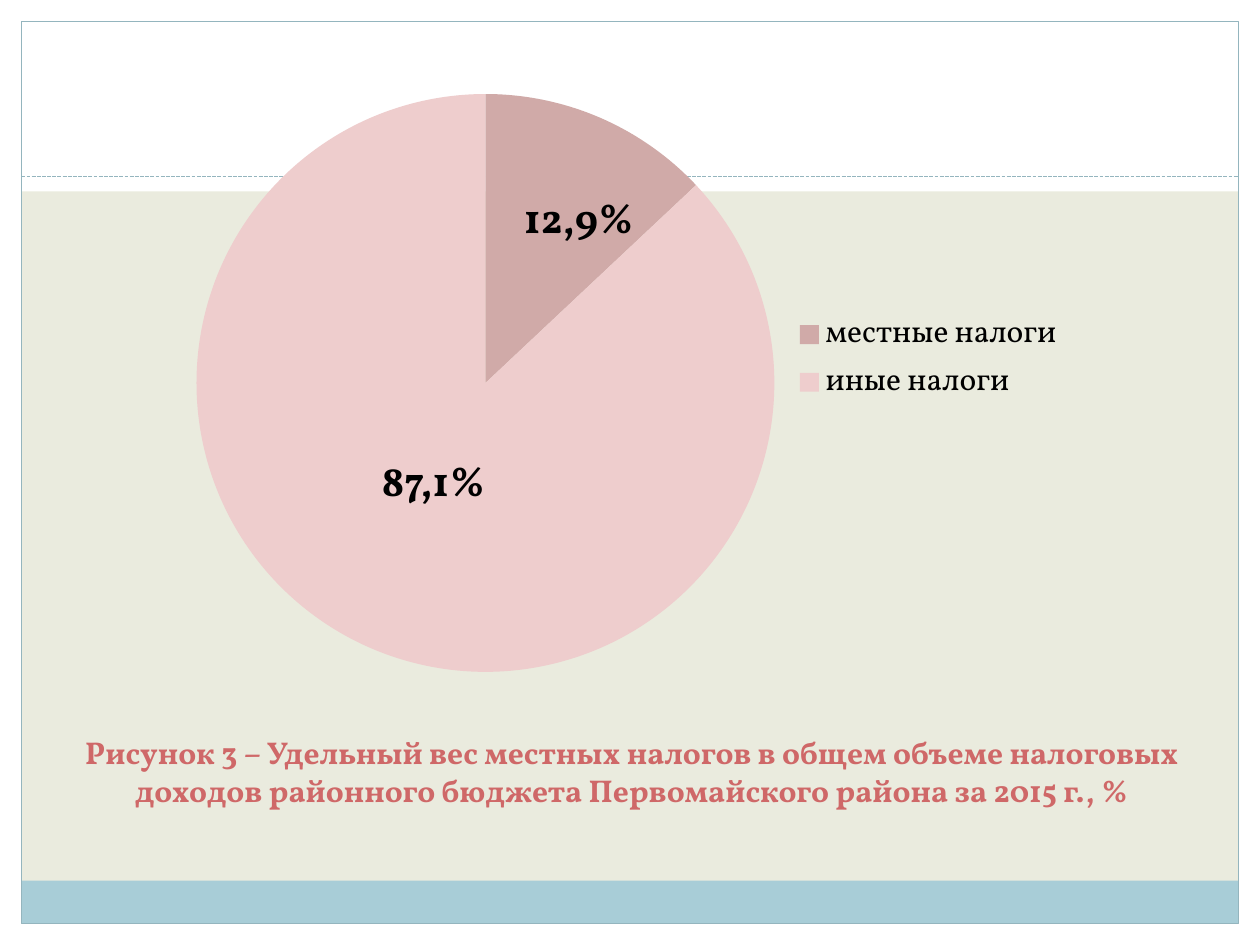
"""Builds a slide with a pie chart of local taxes as a share of district tax revenue."""
import pptx
import pptx.chart.data
import pptx.dml.color
import pptx.enum.chart
import pptx.enum.dml
import pptx.enum.shapes
import pptx.enum.text
import pptx.oxml
import pptx.util
from lxml import etree

FONT = "Vollkorn"
WIDTH, HEIGHT = 10, 7.5
MARGIN = 0.17
HEADER, FOOTER, RULE = 1.52, 0.34, 1.4
PAPER, WHITE, BLUE, EDGE = "EAEBDE", "FFFFFF", "A8CDD7", "94B5BE"
ROSE, BLACK = "CF6868", "000000"
CAPTION = ("Рисунок 3 – Удельный вес местных налогов в общем объеме налоговых "
           "доходов районного бюджета Первомайского района за 2015 г., %")
TAXES = [("местные налоги", 13, "D0AAA8"), ("иные налоги", 87, "EECDCD")]
SHARES = [("12,9%", (4.06, 1.47, 1.26, 0.5), True), ("87,1%", (2.93, 3.56, 1.13, 0.5), False)]
CHART_BOX = (1.3, 0.6, 7.4, 4.88)
PIE_LAYOUT = {"layoutTarget": "inner", "xMode": "edge", "yMode": "edge",
              "x": 0.035, "y": 0.03, "w": 0.62, "h": 0.94}
LEGEND_LAYOUT = {"xMode": "edge", "yMode": "edge", "x": 0.67, "y": 0.38, "w": 0.3, "h": 0.16}
BANDS = [
    ((0, HEIGHT - MARGIN, WIDTH, MARGIN), WHITE),
    ((0, 0, WIDTH, HEADER), WHITE),
    ((0, 0, MARGIN, HEIGHT), WHITE),
    ((WIDTH - MARGIN, 0, MARGIN, HEIGHT), WHITE),
    ((MARGIN, HEIGHT - MARGIN - FOOTER, WIDTH - 2 * MARGIN, FOOTER), BLUE),
    ((MARGIN, MARGIN, WIDTH - 2 * MARGIN, HEIGHT - 2 * MARGIN), None),
]


def rgb(value):
    return pptx.dml.color.RGBColor.from_string(value)


def inches(values):
    return [pptx.util.Inches(value) for value in values]


def paint(fill, color):
    fill.solid()
    fill.fore_color.rgb = rgb(color)


def style(font, size, color, bold):
    font.name, font.size, font.bold = FONT, pptx.util.Pt(size), bold
    font.color.rgb = rgb(color)


def add_band(slide, box, color):
    band = slide.shapes.add_shape(pptx.enum.shapes.MSO_SHAPE.RECTANGLE, *inches(box))
    band.shadow.inherit = False
    if color:
        paint(band.fill, color)
        band.line.fill.background()
    else:
        band.fill.background()
        band.line.color.rgb = rgb(EDGE)
        band.line.width = pptx.util.Pt(0.75)


def add_rule(slide):
    rule = slide.shapes.add_connector(pptx.enum.shapes.MSO_CONNECTOR.STRAIGHT,
                                      *inches((MARGIN, RULE, WIDTH - MARGIN, RULE)))
    rule.line.color.rgb = rgb(EDGE)
    rule.line.width = pptx.util.Pt(0.75)
    rule.line.dash_style = pptx.enum.dml.MSO_LINE.SQUARE_DOT
    etree.SubElement(rule._element.spPr, pptx.oxml.ns.qn("a:effectLst"))


def set_layout(parent, settings, position):
    tag = pptx.oxml.ns.qn("c:layout")
    for old in parent.findall(tag):
        parent.remove(old)
    layout = etree.Element(tag)
    manual = etree.SubElement(layout, pptx.oxml.ns.qn("c:manualLayout"))
    for key, value in settings.items():
        etree.SubElement(manual, pptx.oxml.ns.qn(f"c:{key}")).set("val", str(value))
    parent.insert(position, layout)


def add_pie(slide):
    data = pptx.chart.data.CategoryChartData()
    data.categories = [name for name, _, _ in TAXES]
    data.add_series("Series 1", [value for _, value, _ in TAXES])
    chart = slide.shapes.add_chart(pptx.enum.chart.XL_CHART_TYPE.PIE,
                                   *inches(CHART_BOX), data).chart
    style(chart.font, 18, BLACK, False)
    chart.has_title = False
    chart.has_legend = True
    chart.legend.position = pptx.enum.chart.XL_LEGEND_POSITION.RIGHT
    chart.legend.include_in_layout = False
    plot = chart.plots[0]
    plot.vary_by_categories = True
    for index, (_, _, color) in enumerate(TAXES):
        paint(plot.series[0].points[index].format.fill, color)
    set_layout(chart._chartSpace.chart.plotArea, PIE_LAYOUT, 0)
    set_layout(chart.legend._element, LEGEND_LAYOUT, 1)


def add_caption(slide):
    caption = slide.shapes.title
    caption.left, caption.top, caption.width, caption.height = inches((0.35, 5.64, 9.33, 0.83))
    frame = caption.text_frame
    frame.auto_size = pptx.enum.text.MSO_AUTO_SIZE.NONE
    frame.vertical_anchor = pptx.enum.text.MSO_ANCHOR.BOTTOM
    frame.paragraphs[0].alignment = pptx.enum.text.PP_ALIGN.CENTER
    run = frame.paragraphs[0].add_run()
    run.text = CAPTION
    style(run.font, 18, ROSE, True)


def add_share(slide, text, box, wrap):
    frame = slide.shapes.add_textbox(*inches(box)).text_frame
    frame.word_wrap = wrap
    frame.auto_size = pptx.enum.text.MSO_AUTO_SIZE.SHAPE_TO_FIT_TEXT
    run = frame.paragraphs[0].add_run()
    run.text = text
    style(run.font, 24, BLACK, True)


def main():
    deck = pptx.Presentation()
    deck.slide_width, deck.slide_height = inches((WIDTH, HEIGHT))
    slide = deck.slides.add_slide(deck.slide_layouts[5])
    paint(slide.background.fill, PAPER)
    for box, color in BANDS:
        add_band(slide, box, color)
    add_rule(slide)
    add_caption(slide)
    add_pie(slide)
    for share in SHARES:
        add_share(slide, *share)
    deck.save("out.pptx")


if __name__ == "__main__":
    main()
